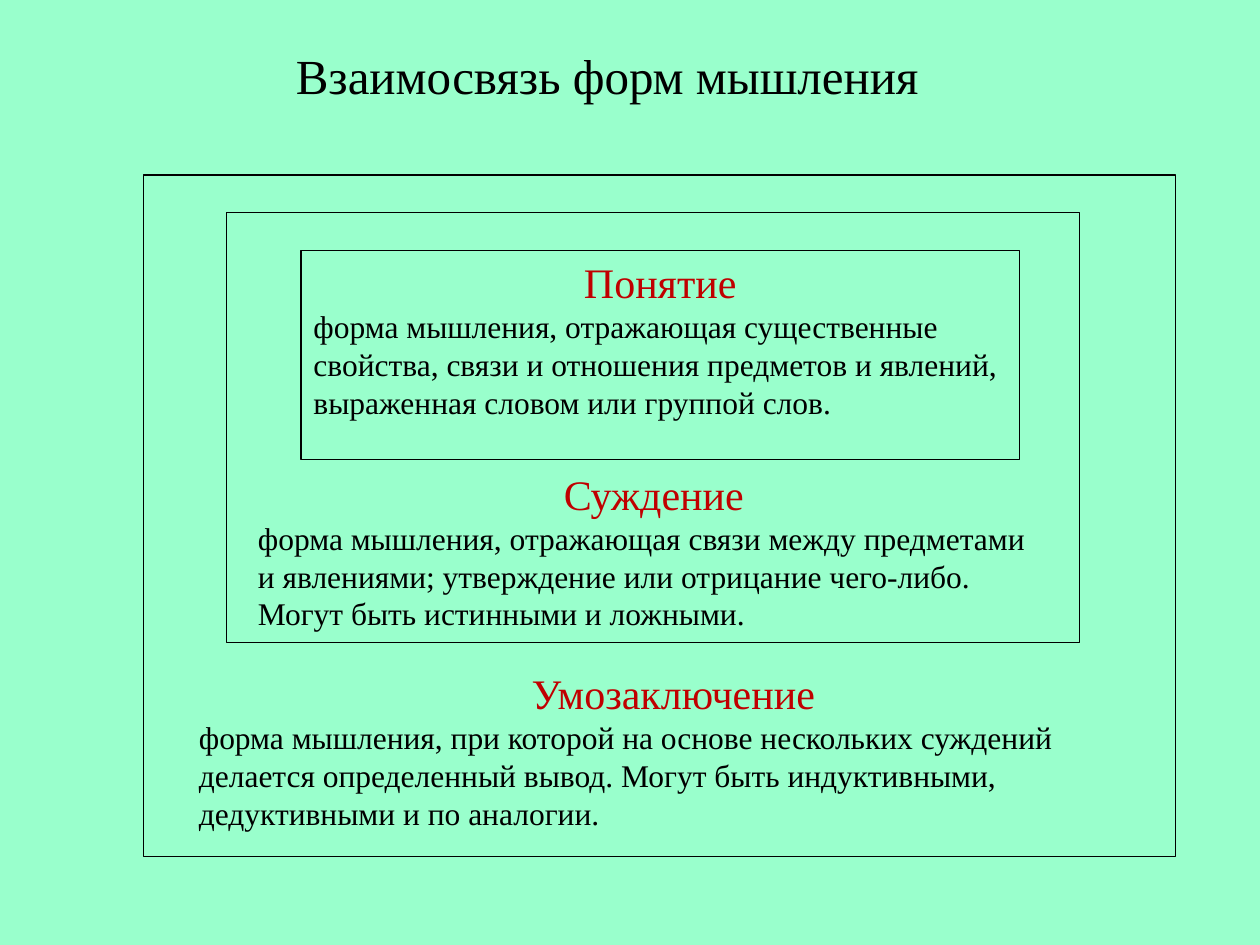
import pptx
import pptx.dml.color
import pptx.enum.shapes
import pptx.enum.text
import pptx.util
from pptx.util import Cm

MINT = pptx.dml.color.RGBColor(0x99, 0xFF, 0xCC)
BLACK = pptx.dml.color.RGBColor(0, 0, 0)
RED = pptx.dml.color.RGBColor(0xC0, 0, 0)
FONT = "Times New Roman"
STEP = 0.76

CONCEPT = (
    "Понятие",
    "форма мышления, отражающая существенные свойства, связи и отношения "
    "предметов и явлений, выраженная словом или группой слов.",
)
JUDGEMENT = (
    "Суждение",
    "форма мышления, отражающая связи между предметами и явлениями; "
    "утверждение или отрицание чего-либо. Могут быть истинными и ложными.",
)
INFERENCE = (
    "Умозаключение",
    "форма мышления, при которой на основе нескольких суждений делается "
    "определенный вывод. Могут быть индуктивными, дедуктивными и по аналогии.",
)


def write_para(para, text, size, color, alignment):
    """Fill one paragraph with text in a single style."""
    para.text = text
    para.alignment = alignment
    for span in para.runs:
        span.font.name = FONT
        span.font.size = pptx.util.Pt(size)
        span.font.color.rgb = color


def write_definition(box, definition):
    """Write a centred red term and its explanation below it."""
    term, explanation = definition
    frame = box.text_frame
    frame.word_wrap = True
    frame.vertical_anchor = pptx.enum.text.MSO_ANCHOR.TOP
    align = pptx.enum.text.PP_ALIGN
    write_para(frame.paragraphs[0], term, 24, RED, align.CENTER)
    write_para(frame.add_paragraph(), explanation, 18, BLACK, align.LEFT)


def add_frame(page, left, top, width, height):
    """Add an unfilled rectangle with a thin black outline."""
    box = page.shapes.add_shape(
        pptx.enum.shapes.MSO_SHAPE.RECTANGLE,
        Cm(left), Cm(top), Cm(width), Cm(height),
    )
    box.shadow.inherit = False
    box.fill.background()
    box.line.color.rgb = BLACK
    box.line.width = pptx.util.Pt(0.75)
    return box


def add_definition(page, left, top, width, height, definition):
    """Add a text box that holds one definition."""
    box = page.shapes.add_textbox(Cm(left), Cm(top), Cm(width), Cm(height))
    write_definition(box, definition)


def add_title(page, left, top, width, height):
    """Add the centred slide title."""
    box = page.shapes.add_textbox(Cm(left), Cm(top), Cm(width), Cm(height))
    box.text_frame.word_wrap = True
    write_para(
        box.text_frame.paragraphs[0], "Взаимосвязь форм мышления",
        28, BLACK, pptx.enum.text.PP_ALIGN.CENTER,
    )


def add_nested_forms(page, left, top, width, height):
    """Nest the three forms of thinking inside the given box."""
    add_frame(page, left, top, width, height)
    add_frame(page, left + 1.67, top + STEP, width - 3.6, height - 5.08)
    concept = add_frame(
        page, left + 3.17, top + 2 * STEP, width - 6.32, height - 9.52
    )
    write_definition(concept, CONCEPT)
    add_definition(
        page, left + 0.86, top + 9.81, width - 1.17, 3.58, INFERENCE
    )
    add_definition(
        page, left + 2.05, top + 5.79, width - 4.34, 3.58, JUDGEMENT
    )


def main():
    """Build the slide and save the deck."""
    deck = pptx.Presentation()
    deck.slide_width, deck.slide_height = Cm(25.4), Cm(19.05)
    page = deck.slides.add_slide(deck.slide_layouts[6])
    page.background.fill.solid()
    page.background.fill.fore_color.rgb = MINT
    add_nested_forms(page, 2.9, 3.53, 20.8, 13.74)
    add_title(page, 3.96, 0.79, 16.56, 1.45)
    deck.save("out.pptx")


if __name__ == "__main__":
    main()
